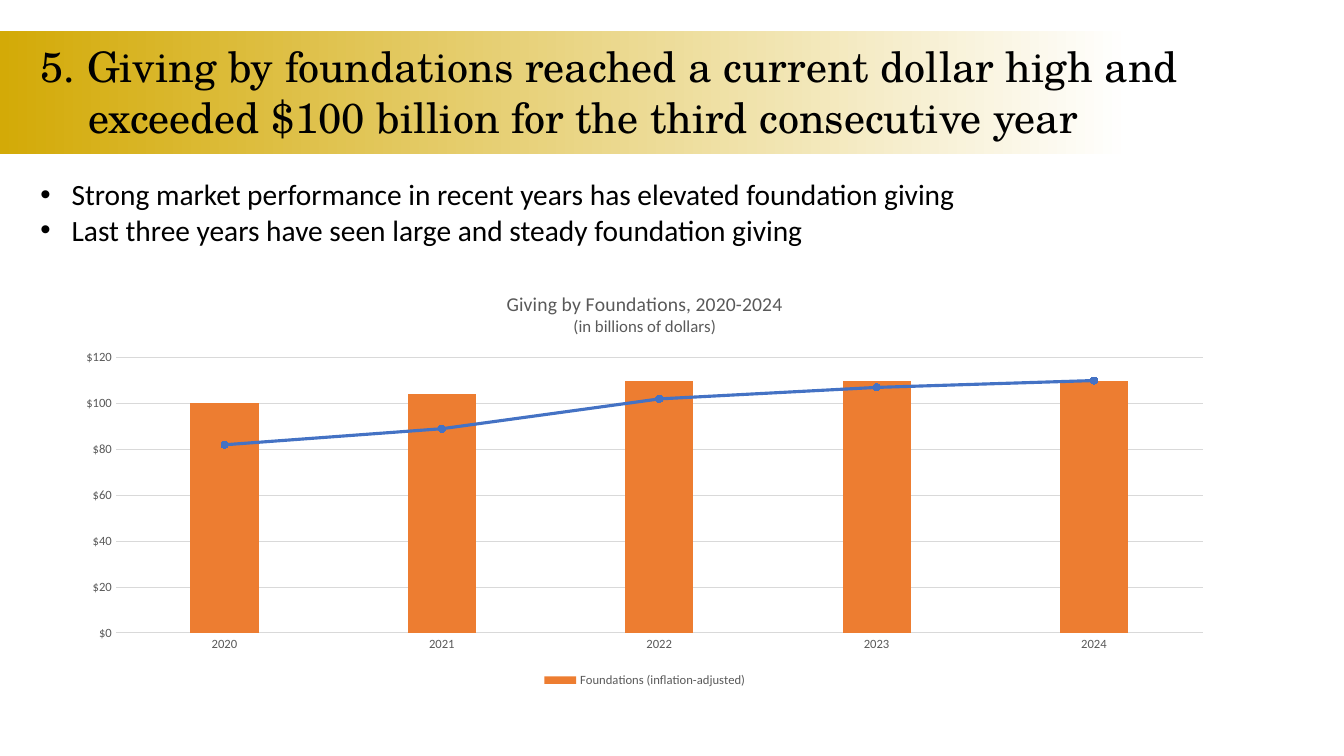
from pptx import Presentation
from pptx.chart.data import CategoryChartData
from pptx.dml.color import RGBColor
from pptx.enum.chart import XL_CHART_TYPE as ChartType, XL_LEGEND_POSITION as LegendPos
from pptx.enum.chart import XL_MARKER_STYLE as MarkerStyle, XL_TICK_MARK as TickMark
from pptx.enum.shapes import MSO_SHAPE as Shape
from pptx.enum.text import MSO_ANCHOR as Anchor, MSO_AUTO_SIZE as AutoSize, PP_ALIGN as Align
from pptx.oxml import parse_xml
from pptx.oxml.ns import nsdecls, qn
from pptx.util import Inches, Pt

BLACK = RGBColor(0x00, 0x00, 0x00)
WHITE = RGBColor(0xFF, 0xFF, 0xFF)
GOLD = RGBColor(0xD3, 0xAA, 0x07)
ORANGE = RGBColor(0xED, 0x7D, 0x31)
BLUE = RGBColor(0x44, 0x72, 0xC4)
LABEL_GREY = RGBColor(0x59, 0x59, 0x59)
GRID_GREY = RGBColor(0xD9, 0xD9, 0xD9)
HEADING_FONT = "TeX Gyre Schola"
BODY_FONT = "Calibri"

BULLETS = [
    "Strong market performance in recent years has elevated foundation giving",
    "Last three years have seen large and steady foundation giving",
]
YEARS = ["2020", "2021", "2022", "2023", "2024"]
INFLATION_ADJUSTED = [100, 104, 110, 110, 110]
CURRENT_DOLLARS = [82, 89, 102, 107, 110]


def place(shape, left, top, width, height):
    shape.left, shape.top = Inches(left), Inches(top)
    shape.width, shape.height = Inches(width), Inches(height)


def set_font(font, size, color, name=BODY_FONT, bold=False):
    font.size, font.name, font.bold = Pt(size), name, bold
    font.color.rgb = color


def write_heading_line(shape, text):
    frame = shape.text_frame
    frame.word_wrap = True
    frame.auto_size = AutoSize.NONE
    frame.vertical_anchor = Anchor.MIDDLE
    line = frame.paragraphs[0]
    line.text = text
    line.alignment = Align.LEFT
    line.line_spacing = 0.9
    set_font(line.font, 30, BLACK, HEADING_FONT)


def add_heading(slide, left, top, width, height):
    # Gold band fading to white
    band = slide.shapes.add_shape(
        Shape.RECTANGLE, Inches(left), Inches(top), Inches(width), Inches(height))
    band.shadow.inherit = False
    band.line.fill.background()
    band.fill.gradient()
    band.fill.gradient_angle = 0
    for stop, color, position in zip(band.fill.gradient_stops, (GOLD, WHITE), (0, 0.98)):
        stop.color.rgb = color
        stop.position = position
    # The band lies behind the placeholders
    tree = band.element.getparent()
    tree.remove(band.element)
    tree.insert(2, band.element)

    # Two heading lines, the second one indented
    title = slide.shapes.title
    place(title, left + 0.3, top + 0.14, 11.5, 0.46)
    write_heading_line(title, "5. Giving by foundations reached a current dollar high and")
    second_line = slide.shapes.add_textbox(
        Inches(left + 0.78), Inches(top + 0.59), Inches(11.5), Inches(0.58))
    write_heading_line(second_line, "exceeded $100 billion for the third consecutive year")


def add_bullets(slide, left, top, width, height):
    body = slide.placeholders[1]
    place(body, left, top, width, height)
    frame = body.text_frame
    frame.auto_size = AutoSize.NONE
    frame.text = "\n".join(BULLETS)
    for point in frame.paragraphs:
        properties = point._p.get_or_add_pPr()
        properties.set("marL", str(Inches(0.31)))
        properties.set("indent", str(Inches(-0.31)))
        properties.append(parse_xml(f'<a:buFont {nsdecls("a")} typeface="Arial"/>'))
        properties.append(parse_xml(f'<a:buChar {nsdecls("a")} char="•"/>'))
        point.space_before = Pt(0)
        set_font(point.font, 21, BLACK)


def move_last_series_to_line(chart):
    """Turn the last column series into a line on the same axes."""
    columns = chart.plots[0]._element
    series = columns.findall(qn("c:ser"))[-1]
    for column_only in series.findall(qn("c:invertIfNegative")):
        series.remove(column_only)
    line_plot = parse_xml(
        f'<c:lineChart {nsdecls("c")}><c:grouping val="standard"/>'
        '<c:varyColors val="0"/><c:marker val="1"/></c:lineChart>')
    line_plot.insert(2, series)
    for axis_id in columns.findall(qn("c:axId")):
        line_plot.append(parse_xml(
            f'<c:axId {nsdecls("c")} val="{axis_id.get("val")}"/>'))
    columns.addnext(line_plot)


def format_axes(chart):
    for axis in (chart.category_axis, chart.value_axis):
        axis.major_tick_mark = axis.minor_tick_mark = TickMark.NONE
        set_font(axis.tick_labels.font, 9, LABEL_GREY)
    dollars = chart.value_axis
    dollars.minimum_scale, dollars.maximum_scale, dollars.major_unit = 0, 120, 20
    dollars.tick_labels.number_format = '"$"#,##0'
    dollars.tick_labels.number_format_is_linked = False
    dollars.format.line.fill.background()
    for line in (chart.category_axis.format.line, dollars.major_gridlines.format.line):
        line.color.rgb = GRID_GREY
        line.width = Pt(0.75)


def add_giving_chart(slide, left, top, width, height):
    giving = CategoryChartData()
    giving.categories = YEARS
    giving.add_series("Foundations (inflation-adjusted)", INFLATION_ADJUSTED)
    giving.add_series("Series 2", CURRENT_DOLLARS)
    chart = slide.shapes.add_chart(
        ChartType.COLUMN_CLUSTERED, Inches(left), Inches(top),
        Inches(width), Inches(height), giving).chart
    set_font(chart.font, 10, BLACK)
    move_last_series_to_line(chart)

    # Columns and line
    columns, line_plot = chart.plots
    columns.gap_width = 219
    columns.vary_by_categories = False
    columns.series[0].format.fill.solid()
    columns.series[0].format.fill.fore_color.rgb = ORANGE
    trend = line_plot.series[0]
    trend.smooth = False
    trend.format.line.color.rgb = BLUE
    trend.format.line.width = Pt(2.25)
    trend.marker.style = MarkerStyle.CIRCLE
    trend.marker.size = 5
    trend.marker.format.fill.solid()
    trend.marker.format.fill.fore_color.rgb = BLUE
    trend.marker.format.line.color.rgb = BLUE
    format_axes(chart)

    # Chart title
    chart.has_title = True
    chart.chart_title.include_in_layout = False
    caption = chart.chart_title.text_frame
    caption.text = "Giving by Foundations, 2020-2024\n(in billions of dollars)"
    for line, size in zip(caption.paragraphs, (14, 12)):
        set_font(line.font, size, LABEL_GREY)

    # Legend shows the columns only
    chart.has_legend = True
    chart.legend.position = LegendPos.BOTTOM
    chart.legend.include_in_layout = False
    set_font(chart.legend.font, 9, LABEL_GREY)
    chart.legend._element.get_or_add_legendPos().addnext(parse_xml(
        f'<c:legendEntry {nsdecls("c")}><c:idx val="1"/><c:delete val="1"/></c:legendEntry>'))

    # Plot area within the chart
    plot_area = columns._element.getparent()
    for old_layout in plot_area.findall(qn("c:layout")):
        plot_area.remove(old_layout)
    bounds = "".join(f'<c:{side} val="{share}"/>' for side, share in
                     (("x", 0.045), ("y", 0.2), ("w", 0.935), ("h", 0.66)))
    plot_area.insert(0, parse_xml(
        f'<c:layout {nsdecls("c")}><c:manualLayout><c:layoutTarget val="inner"/>'
        f'<c:xMode val="edge"/><c:yMode val="edge"/>{bounds}</c:manualLayout></c:layout>'))


def main():
    deck = Presentation()
    deck.slide_width, deck.slide_height = Inches(13.33), Inches(7.5)
    slide = deck.slides.add_slide(deck.slide_layouts[1])
    add_heading(slide, 0, 0.31, 11.44, 1.22)
    add_bullets(slide, 0.3, 1.7, 11.76, 0.81)
    add_giving_chart(slide, 0.63, 2.72, 11.53, 4.14)
    deck.save("out.pptx")


if __name__ == "__main__":
    main()
